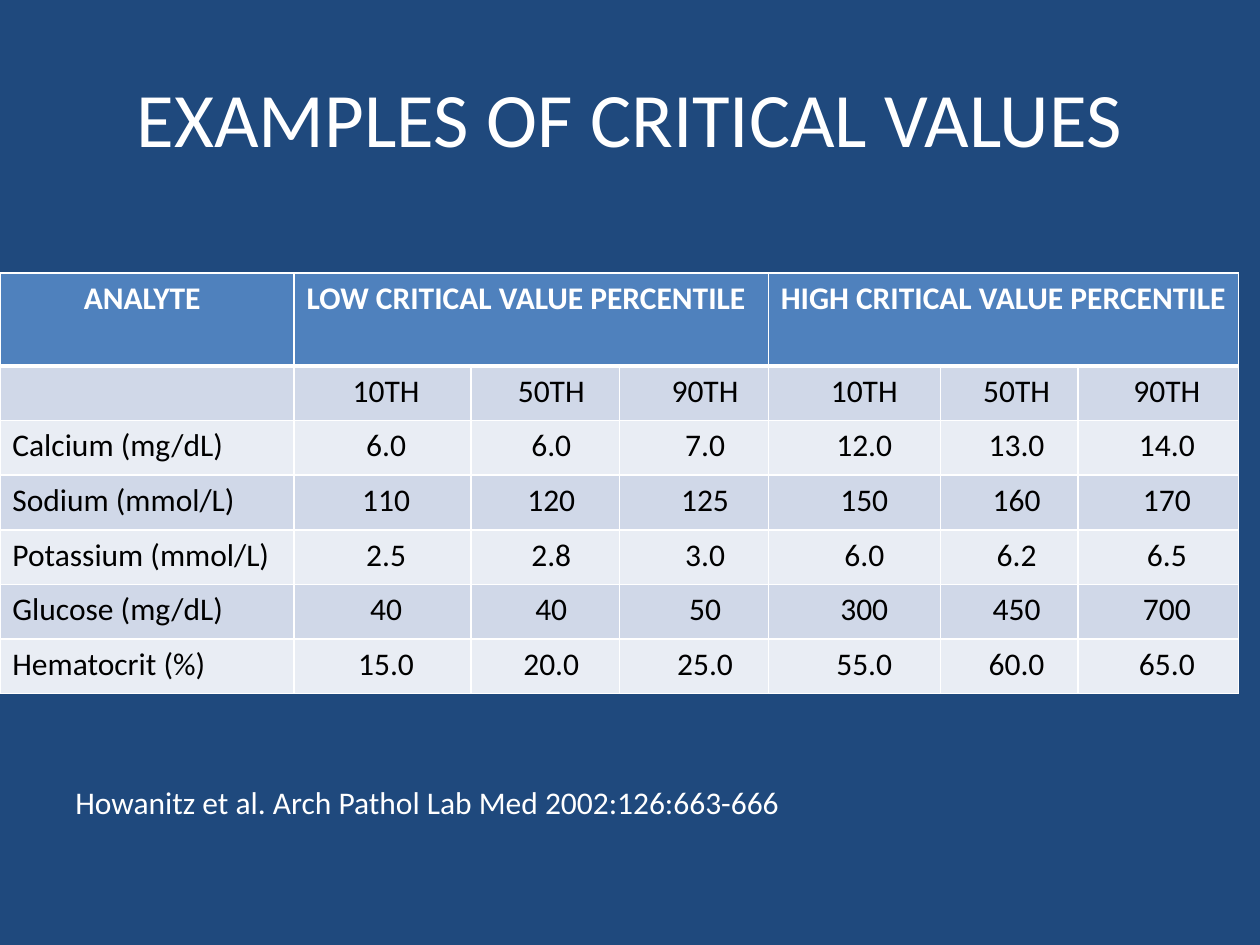
from lxml import etree
from pptx import Presentation, util as u
from pptx.dml.color import RGBColor
from pptx.enum import text
from pptx.oxml.ns import qn

FONT = "Calibri"
COLORS = {"back": "1F497D", "head": "4F81BD", "dark_band": "D0D8E8",
          "light_band": "E9EDF4", "white": "FFFFFF", "black": "000000"}

HEADINGS = {0: "ANALYTE", 1: "LOW CRITICAL VALUE PERCENTILE",
            4: "HIGH CRITICAL VALUE PERCENTILE"}
PERCENTILES = ["10TH", "50TH", "90TH"]
ROWS = [
    ["", *PERCENTILES * 2],
    ["Calcium (mg/dL)", "6.0", "6.0", "7.0", "12.0", "13.0", "14.0"],
    ["Sodium (mmol/L)", "110", "120", "125", "150", "160", "170"],
    ["Potassium (mmol/L)", "2.5", "2.8", "3.0", "6.0", "6.2", "6.5"],
    ["Glucose (mg/dL)", "40", "40", "50", "300", "450", "700"],
    ["Hematocrit (%)", "15.0", "20.0", "25.0", "55.0", "60.0", "65.0"],
]
COL_WIDTHS = [5.93, 3.56, 3, 3, 3.47, 2.77, 3.24]
COL_INDENTS = [0, 0.15, 0.25, 0.45, 0.4, 0.3, 0.35]
HEAD_HEIGHT, ROW_HEIGHT = 1.88, 1.1
MARGIN, ANALYTE_INDENT = 0.25, 1.44


def rgb(name):
    return RGBColor.from_string(COLORS[name])


def style(p, size, color, bold=False, align=text.PP_ALIGN.LEFT):
    p.alignment = align
    p.font.name, p.font.size, p.font.bold = FONT, u.Pt(size), bold
    p.font.color.rgb = rgb(color)


def add_text(slide, box, words, size, align, anchor, wrap):
    tf = slide.shapes.add_textbox(*map(u.Cm, box)).text_frame
    tf.word_wrap, tf.vertical_anchor = wrap, anchor
    p = tf.paragraphs[0]
    p.text = words
    style(p, size, "white", align=align)


def add_title(slide, box):
    add_text(slide, box, "EXAMPLES OF CRITICAL VALUES", 44,
             text.PP_ALIGN.CENTER, text.MSO_ANCHOR.MIDDLE, True)


def add_citation(slide, box):
    add_text(slide, box, "Howanitz et al. Arch Pathol Lab Med 2002:126:663-666", 18,
             text.PP_ALIGN.LEFT, text.MSO_ANCHOR.TOP, False)


def set_borders(cell, widths):
    """Draw white borders; the lines must come before the fill in tcPr."""
    tcPr = cell._tc.get_or_add_tcPr()
    for i, (side, width) in enumerate(widths.items()):
        ln = etree.Element(qn("a:ln" + side), w=str(u.Pt(width)))
        fill = etree.SubElement(ln, qn("a:solidFill"))
        etree.SubElement(fill, qn("a:srgbClr"), val=COLORS["white"])
        tcPr.insert(i, ln)


def fill_cell(cell, words, fill, color, bold, align, indent):
    cell.fill.solid()
    cell.fill.fore_color.rgb = rgb(fill)
    cell.margin_left = u.Cm(MARGIN + indent)
    p = cell.text_frame.paragraphs[0]
    p.text = words
    style(p, 18, color, bold, align)


def add_values_table(slide, left, top):
    n_rows, n_cols = len(ROWS) + 1, len(COL_WIDTHS)
    height = HEAD_HEIGHT + ROW_HEIGHT * len(ROWS)
    table = slide.shapes.add_table(
        n_rows, n_cols, u.Cm(left), u.Cm(top),
        u.Cm(sum(COL_WIDTHS)), u.Cm(height)).table
    for col, width in zip(table.columns, COL_WIDTHS):
        col.width = u.Cm(width)
    for i, row in enumerate(table.rows):
        row.height = u.Cm(ROW_HEIGHT if i else HEAD_HEIGHT)

    # Header row
    for c in range(n_cols):
        fill_cell(table.cell(0, c), HEADINGS.get(c, ""), "head", "white", True,
                  text.PP_ALIGN.LEFT, 0 if c else ANALYTE_INDENT)
    # Banded value rows
    for r, values in enumerate(ROWS, 1):
        band = "dark_band" if r % 2 else "light_band"
        for c, value in enumerate(values):
            align = text.PP_ALIGN.CENTER if c else text.PP_ALIGN.LEFT
            fill_cell(table.cell(r, c), value, band, "black", False,
                      align, COL_INDENTS[c])
    # Borders, thicker below the header
    for r in range(n_rows):
        for c in range(n_cols):
            set_borders(table.cell(r, c), {"L": 1, "R": 1, "T": 3 if r == 1 else 1,
                                           "B": 1 if r else 3})
    for c in (1, 4):
        table.cell(0, c).merge(table.cell(0, c + 2))


def main():
    prs = Presentation()
    prs.slide_width, prs.slide_height = u.Cm(25.4), u.Cm(19.05)
    slide = prs.slides.add_slide(prs.slide_layouts[6])
    slide.background.fill.solid()
    slide.background.fill.fore_color.rgb = rgb("back")
    add_title(slide, (1.27, 0.76, 22.86, 3.18))
    add_values_table(slide, 0, 5.5)
    add_citation(slide, (1.27, 15.67, 14.88, 1.02))
    prs.save("out.pptx")


if __name__ == "__main__":
    main()
